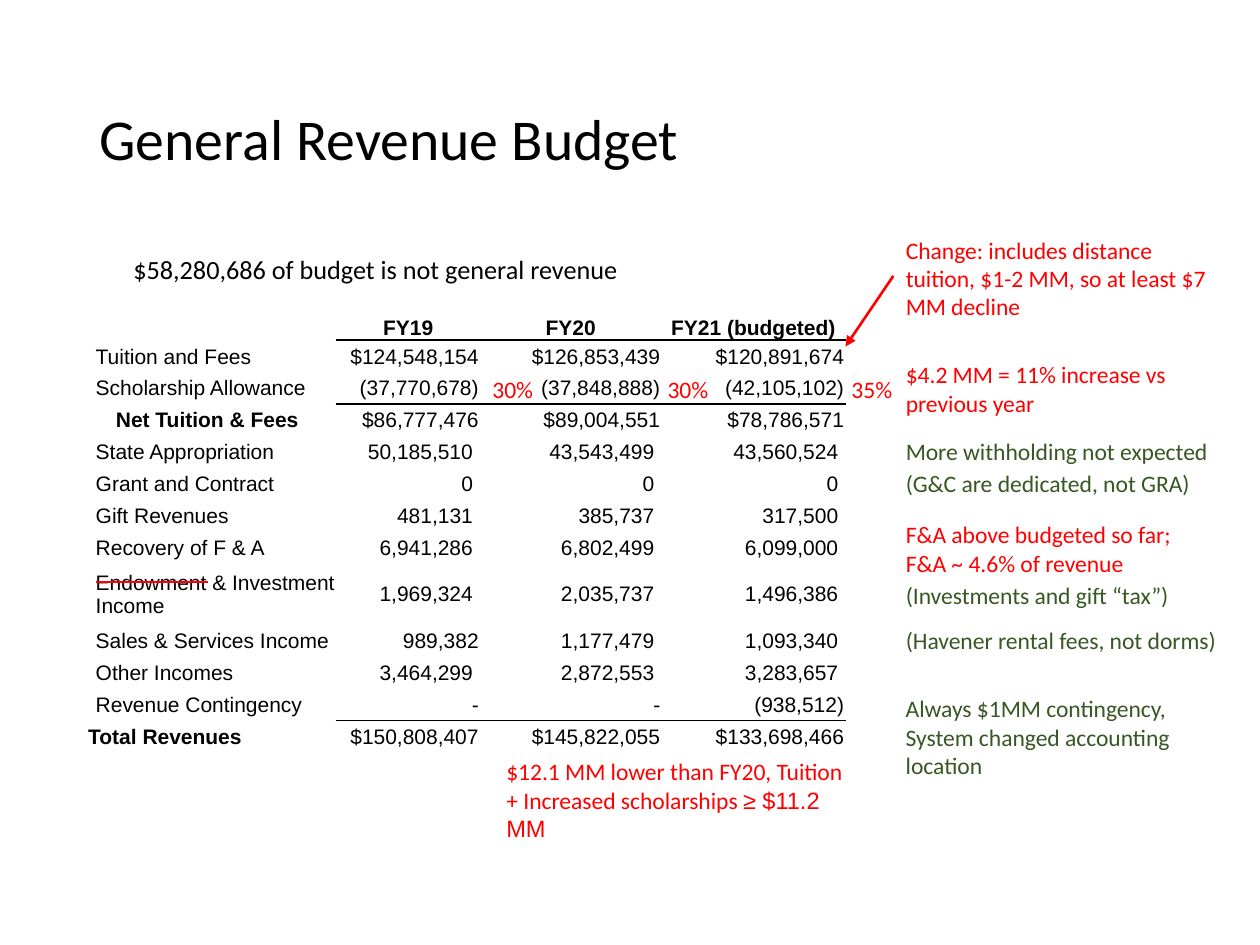
from dataclasses import dataclass

from pptx import Presentation
from pptx.dml.color import RGBColor as RGB
from pptx.enum.shapes import MSO_CONNECTOR as Link
from pptx.enum.text import MSO_ANCHOR as Anchor, MSO_AUTO_SIZE as Auto, PP_ALIGN as Align
from pptx.oxml import parse_xml
from pptx.oxml.ns import nsdecls
from pptx.util import Inches, Pt


@dataclass(frozen=True)
class Theme:
    black: str = "000000"
    white: str = "FFFFFF"
    red: str = "FF0000"
    green: str = "385723"
    body: str = "Calibri"
    grid: str = "Arial"
    title: float = 33
    lead: float = 15
    note: float = 13.5
    cell: float = 12


COLS, ROWS = 100, 75
HEAD = ["", "FY19", "FY20", "FY21 (budgeted)"]
BUDGET = [
    ["Tuition and Fees", "$124,548,154", "$126,853,439", "$120,891,674"],
    ["Scholarship Allowance", "(37,770,678)", "(37,848,888)", "(42,105,102)"],
    ["Net Tuition & Fees", "$86,777,476", "$89,004,551", "$78,786,571"],
    ["State Appropriation", "50,185,510 ", "43,543,499 ", "43,560,524 "],
    ["Grant and Contract", "0 ", "0 ", "0 "],
    ["Gift Revenues", "481,131 ", "385,737 ", "317,500 "],
    ["Recovery of F & A", "6,941,286 ", "6,802,499 ", "6,099,000 "],
    ["Endowment & Investment Income", "1,969,324 ", "2,035,737 ", "1,496,386 "],
    ["Sales & Services Income", "989,382", "1,177,479 ", "1,093,340 "],
    ["Other Incomes", "3,464,299 ", "2,872,553 ", "3,283,657 "],
    ["Revenue Contingency", "-", "-", "(938,512)"],
    ["Total Revenues", "$150,808,407", "$145,822,055", "$133,698,466"],
]
WIDTHS = [19.8, 11.4, 14.4, 14.6]
HEIGHTS = [4.4] + [2.53] * 7 + [4.9] + [2.53] * 4
INDENT = {"Net Tuition & Fees": 0.23, "Total Revenues": 0.01}
RULED = {0, 2, 11}  # rows with a line below them


def apply(item, values):
    for name, value in values.items():
        setattr(item, name, value)


class Page:
    """Draws on one slide, in columns and rows of a COLS by ROWS grid."""

    def __init__(self, deck, theme):
        self.deck, self.theme = deck, theme
        self.slide = deck.slides.add_slide(deck.slide_layouts[6])
        self.shapes = self.slide.shapes

    def x(self, cols):
        return round(self.deck.slide_width * cols / COLS)

    def y(self, rows):
        return round(self.deck.slide_height * rows / ROWS)

    def box(self, left, top, width, height):
        return self.x(left), self.y(top), self.x(width), self.y(height)

    def run(self, para, text, size, color, face, bold=False):
        run = para.add_run()
        run.text = text
        apply(run.font, {"size": Pt(size), "name": face, "bold": bold})
        run.font.color.rgb = RGB.from_string(color)

    def text(self, place, lines, color, size=None, **form):
        """Each line is a string or a list of (text, font) parts."""
        frame = self.shapes.add_textbox(*self.box(*place)).text_frame
        apply(frame, {"word_wrap": True, "auto_size": Auto.SHAPE_TO_FIT_TEXT, **form})
        for i, line in enumerate(lines):
            para = frame.add_paragraph() if i else frame.paragraphs[0]
            parts = [(line, self.theme.body)] if isinstance(line, str) else line
            for words, face in parts:
                self.run(para, words, size or self.theme.note, color, face)
        return frame

    def line(self, start, end, color, width, arrow=False):
        (a, b), (c, d) = start, end
        link = self.shapes.add_connector(
            Link.STRAIGHT, self.x(a), self.y(b), self.x(c), self.y(d))
        link.line.width = Pt(width)
        link.line.color.rgb = RGB.from_string(color)
        if arrow:
            link.line._get_or_add_ln().append(
                parse_xml(f'<a:tailEnd {nsdecls("a")} type="triangle"/>'))
        link._element.spPr.append(parse_xml(f'<a:effectLst {nsdecls("a")}/>'))

    def edge(self, cell, side):
        cell._tc.get_or_add_tcPr().insert(0, parse_xml(
            f'<a:{side} {nsdecls("a")} w="12700"><a:solidFill>'
            f'<a:srgbClr val="{self.theme.black}"/></a:solidFill></a:{side}>'))

    def cell(self, cell, text, row, col):
        look, head = self.theme, row == 0
        indent = 0.01 if col or head else INDENT.get(text, 0.07)
        apply(cell, {
            "margin_left": Inches(indent),
            "margin_right": Inches(0.01),
            "margin_top": Inches(0.01),
            "margin_bottom": 0,
            "vertical_anchor": Anchor.BOTTOM if head else Anchor.MIDDLE,
        })
        cell.fill.solid()
        cell.fill.fore_color.rgb = RGB.from_string(look.white)
        para = cell.text_frame.paragraphs[0]
        para.alignment = Align.CENTER if head else Align.RIGHT if col else Align.LEFT
        bold = head or text in INDENT
        self.run(para, text, look.cell, look.black, look.grid, bold)
        if col and row in RULED:
            self.edge(cell, "lnB")
        if col and row - 1 in RULED:
            self.edge(cell, "lnT")

    def table(self, left, top, data):
        place = self.box(left, top, sum(WIDTHS), sum(HEIGHTS))
        grid = self.shapes.add_table(len(data), len(WIDTHS), *place).table
        apply(grid, {"first_row": False, "horz_banding": False})
        for col, width in zip(grid.columns, WIDTHS):
            col.width = self.x(width)
        for row, height in zip(grid.rows, HEIGHTS):
            row.height = self.y(height)
        for r, line in enumerate(data):
            for c, text in enumerate(line):
                self.cell(grid.cell(r, c), text, r, c)


def main():
    deck = Presentation()
    apply(deck, {"slide_width": Inches(10), "slide_height": Inches(7.5)})
    look = Theme()
    page = Page(deck, look)

    title = page.text((6.9, 4, 86.2, 14.5), ["General Revenue Budget"], look.black,
                      look.title, auto_size=Auto.NONE, vertical_anchor=Anchor.MIDDLE)
    title.paragraphs[0].line_spacing = 0.9
    page.table(6.9, 22.6, [HEAD] + BUDGET)
    page.text((9.6, 19.6, 40.9, 3.5), ["$58,280,686 of budget is not general revenue"],
              look.black, look.lead, word_wrap=False)

    for left, share in [(38.1, "30%"), (52, "30%"), (66.6, "35%")]:
        page.text((left, 29.3, 5.3, 3.3), [share], look.red, word_wrap=False)

    side = 70.9
    notes = [
        (18.2, 26.8, 7.8, look.red,
         ["Change: includes distance tuition, $1-2 MM, so at least $7 MM decline"]),
        (28.1, 26.8, 5.6, look.red, ["$4.2 MM = 11% increase vs previous year"]),
        (34.2, 26.8, 3.3, look.green, ["More withholding not expected"]),
        (36.7, 26.8, 3.3, look.green, ["(G&C are dedicated, not GRA)"]),
        (40.8, 26.8, 5.6, look.red,
         ["F&A above budgeted so far;", "F&A ~ 4.6% of revenue"]),
        (45.6, 26.8, 3.3, look.green, ["(Investments and gift “tax”)"]),
        (49.2, 26.8, 3.3, look.green, ["(Havener rental fees, not dorms)"]),
        (54.6, 28.4, 7.8, look.green,
         ["Always $1MM contingency, System changed accounting location"]),
    ]
    for top, width, height, color, lines in notes:
        page.text((side, top, width, height), lines, color)
    page.text((39.2, 59.6, 29.8, 7.8), [[
        ("$12.1 MM lower than FY20, Tuition + Increased scholarships ", look.body),
        ("≥ $11.2 MM", look.grid)]], look.red)

    page.line((side, 21.9), (67.1, 27.5), look.red, 1.5, arrow=True)
    page.line((7.6, 46.2), (16.5, 46.2), look.red, 1)
    deck.save("out.pptx")


if __name__ == "__main__":
    main()
